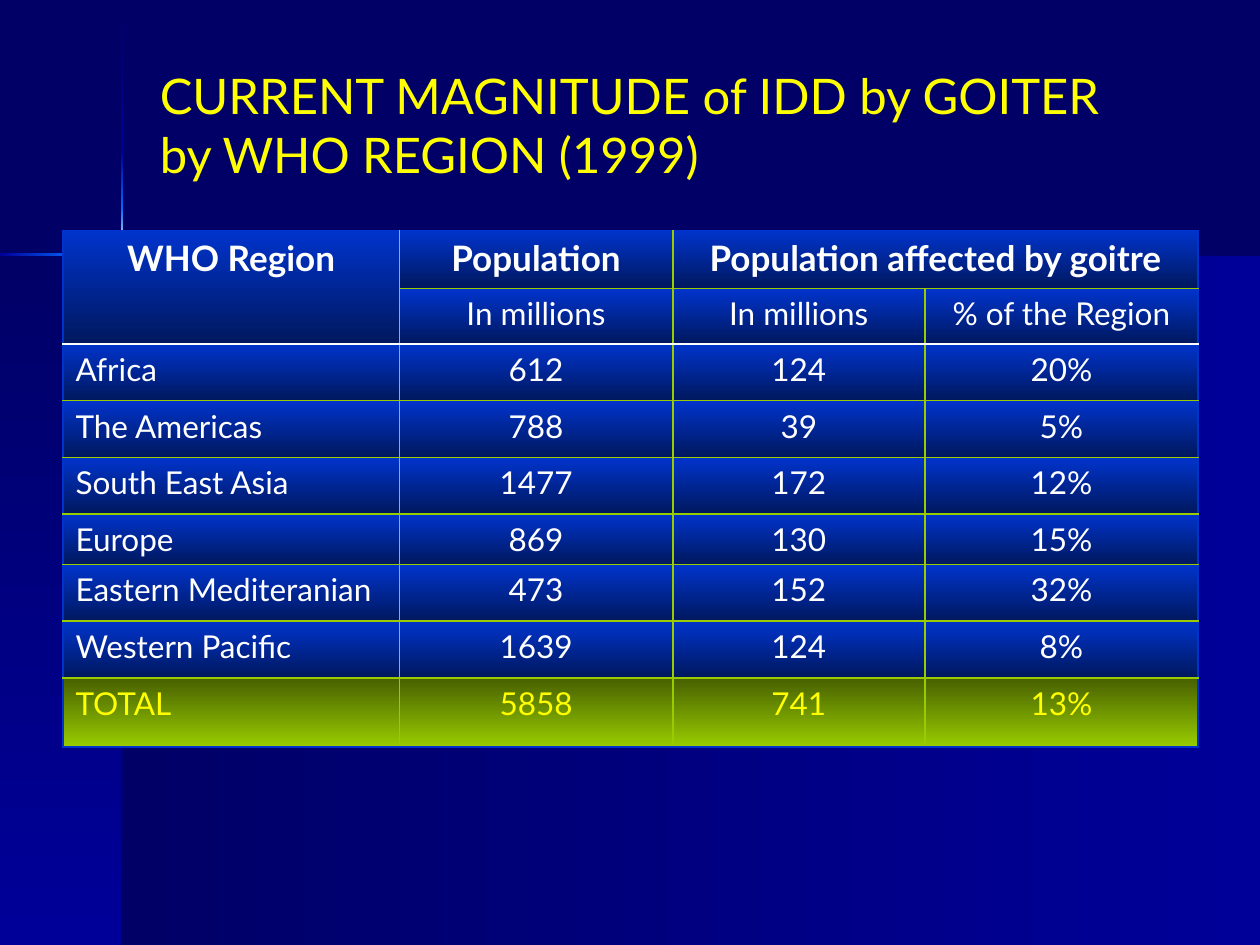
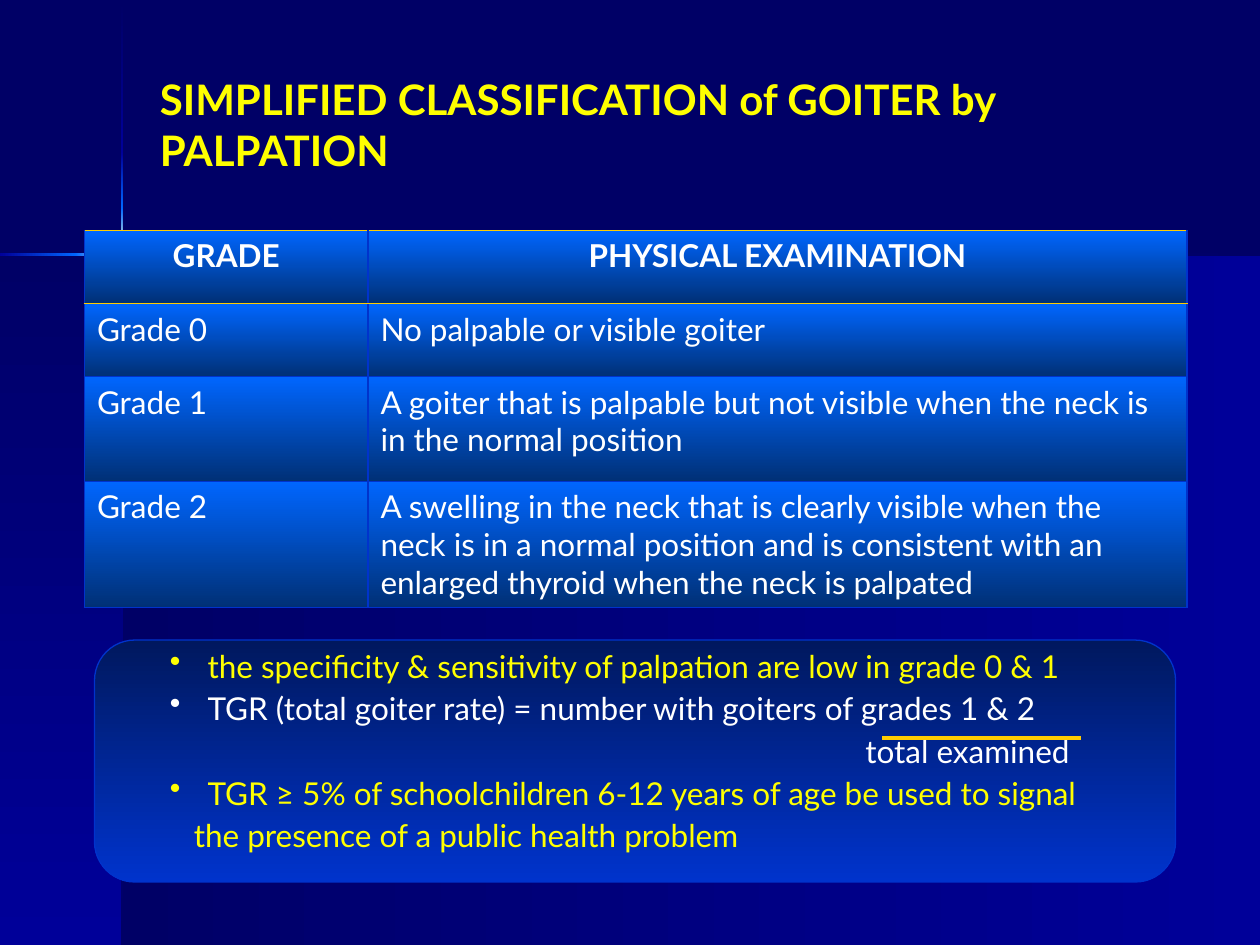
from dataclasses import dataclass, field

import pptx
import pptx.dml.color
import pptx.enum.shapes
import pptx.enum.text
import pptx.oxml
import pptx.oxml.ns
import pptx.util

Inches = pptx.util.Inches
Pt = pptx.util.Pt
ALIGN = pptx.enum.text.PP_ALIGN
ANCHOR = pptx.enum.text.MSO_ANCHOR
SHAPE = pptx.enum.shapes.MSO_SHAPE
NS = pptx.oxml.ns.nsdecls("a")


@dataclass(frozen=True)
class Theme:
    font: str = "Lato"
    navy: str = "000066"
    deep: str = "000099"
    royal: str = "0033CC"
    royal_dark: str = "00185E"
    bright: str = "0066FF"
    bright_dark: str = "003076"
    glow: str = "FFFFCC"
    lime: str = "99CC00"
    lime_dark: str = "476000"
    yellow: str = "FFFF00"
    gold: str = "FFCC00"
    white: str = "FFFFFF"
    title: int = 28
    subtitle: int = 24
    heading: int = 20
    body: int = 18


T = Theme()


@dataclass(frozen=True)
class Band:
    left: float
    top: float
    width: float
    height: float
    colors: tuple[str, ...]
    angle: int


@dataclass(frozen=True)
class Bullet:
    text: str
    color: str
    indent: float = 0.3
    marked: bool = True


@dataclass(frozen=True)
class Grid:
    """Look of a table; rules maps a horizontal line number to its colour."""
    left: float
    top: float
    cols: list[float]
    rows: list[float]
    fill: tuple[str, str]
    inner: str
    outer: str
    rules: dict[int, str] = field(default_factory=dict)


DOWN, ACROSS = 90, 0
FADE_IN, FADE_OUT = (T.navy, T.deep), (T.deep, T.navy)
RISE, FALL = (T.deep, T.bright), (T.bright, T.deep)
SHINE = (T.bright, T.glow, T.bright)

# Background panels and the glowing cross lines
BANDS = [
    Band(0.97, 2.02, 9.03, 5.48, FADE_IN, ACROSS),
    Band(0, 2.02, 0.97, 5.48, FADE_IN, DOWN),
    Band(0.96, 0.01, 0.02, 1.21, FADE_IN, DOWN),
    Band(0.96, 2.82, 0.02, 4.68, FADE_OUT, DOWN),
    Band(1.77, 2.01, 8.23, 0.02, FADE_OUT, ACROSS),
    Band(0.96, 2.38, 0.02, 0.44, FALL, DOWN),
    Band(0.96, 1.21, 0.02, 0.44, RISE, DOWN),
    Band(0.96, 1.65, 0.02, 0.73, SHINE, DOWN),
    Band(0, 2.01, 0.61, 0.02, RISE, ACROSS),
    Band(1.33, 2.01, 0.44, 0.02, FALL, ACROSS),
    Band(0.6, 2.01, 0.73, 0.02, SHINE, ACROSS),
]


def rgb(color: str):
    return pptx.dml.color.RGBColor.from_string(color)


def gradient(colors: tuple[str, ...], angle: int):
    step = 100000 // (len(colors) - 1)
    stops = "".join(f'<a:gs pos="{i * step}"><a:srgbClr val="{c}"/></a:gs>'
                    for i, c in enumerate(colors))
    return pptx.oxml.parse_xml(
        f'<a:gradFill {NS} rotWithShape="1"><a:gsLst>{stops}</a:gsLst>'
        f'<a:lin ang="{angle * 60000}" scaled="0"/></a:gradFill>')


def add_text(p, text: str, *, size: int = T.body, color: str = T.white,
             bold: bool = False, align=ALIGN.LEFT) -> None:
    p.alignment = align
    r = p.add_run()
    r.text = text
    r.font.name = T.font
    r.font.size = Pt(size)
    r.font.bold = bold
    r.font.color.rgb = rgb(color)


def add_panel(s, kind, band: Band, line: str | None = None) -> None:
    sp = s.shapes.add_shape(kind, Inches(band.left), Inches(band.top),
                            Inches(band.width), Inches(band.height))
    sp.shadow.inherit = False
    geometry = sp._element.spPr.find(pptx.oxml.ns.qn("a:prstGeom"))
    geometry.addnext(gradient(band.colors, band.angle))
    if line:
        sp.line.color.rgb = rgb(line)
        sp.line.width = Pt(0.75)
    else:
        sp.line.fill.background()


def add_text_frame(s, left: float, top: float, width: float, height: float):
    tf = s.shapes.add_textbox(Inches(left), Inches(top), Inches(width),
                              Inches(height)).text_frame
    tf.word_wrap = True
    return tf


def new_slide(prs, title: str, *, width: float, size: int, bold: bool = False):
    s = prs.slides.add_slide(prs.slide_layouts[6])
    s.background.fill.solid()
    s.background.fill.fore_color.rgb = rgb(T.navy)
    for band in BANDS:
        add_panel(s, SHAPE.RECTANGLE, band)
    tf = add_text_frame(s, 1.17, 0.33, width, 1.31)
    tf.vertical_anchor = ANCHOR.MIDDLE
    add_text(tf.paragraphs[0], title, size=size, color=T.yellow, bold=bold)
    return s


def add_grid(s, grid: Grid, merges: tuple = ()):
    table = s.shapes.add_table(
        len(grid.rows), len(grid.cols), Inches(grid.left), Inches(grid.top),
        Inches(sum(grid.cols)), Inches(sum(grid.rows))).table
    table.first_row = table.horz_banding = False
    for col, width in zip(table.columns, grid.cols):
        col.width = Inches(width)
    for row, height in zip(table.rows, grid.rows):
        row.height = Inches(height)
    for start, end in merges:
        table.cell(*start).merge(table.cell(*end))
    for i in range(len(grid.rows)):
        for j in range(len(grid.cols)):
            cell = table.cell(i, j)
            if not cell.is_spanned:
                style_cell(cell, grid, i, j)
    return table


def style_cell(cell, grid: Grid, i: int, j: int) -> None:
    bottom, right = i + 1, j + 1
    if cell.is_merge_origin:
        bottom, right = i + cell.span_height, j + cell.span_width
    edges = {
        "L": grid.inner if j else grid.outer,
        "R": grid.inner if right < len(grid.cols) else grid.outer,
        "T": grid.rules.get(i, grid.inner),
        "B": grid.rules.get(bottom, grid.inner),
    }
    tcPr = cell._tc.get_or_add_tcPr()
    for side, color in edges.items():
        tcPr.append(pptx.oxml.parse_xml(
            f'<a:ln{side} {NS} w="12700"><a:solidFill><a:srgbClr val="{color}"/>'
            f'</a:solidFill></a:ln{side}>'))
    is_total = cell.text_frame is not None and grid is REGION_GRID and bottom == len(grid.rows)
    tcPr.append(gradient((T.lime_dark, T.lime) if is_total else grid.fill, DOWN))


def add_bullets(tf, bullets: list[Bullet]) -> None:
    for i, bullet in enumerate(bullets):
        p = tf.paragraphs[0] if i == 0 else tf.add_paragraph()
        add_text(p, bullet.text, color=bullet.color)
        p.line_spacing = 0.7
        p.space_before = Pt(9)
        pPr = p._p.get_or_add_pPr()
        pPr.set("marL", str(Inches(bullet.indent)))
        if bullet.marked:
            pPr.set("indent", str(-Inches(bullet.indent)))
            pPr.append(pptx.oxml.parse_xml(f'<a:buChar {NS} char="•"/>'))


# Slide 1: regional figures
REGION_GRID = Grid(0.5, 1.83, [2.67, 2.17, 2, 2.17],
                   [0.46, 0.44, 0.45, 0.45, 0.45, 0.4, 0.45, 0.45, 0.55],
                   (T.royal, T.royal_dark), T.lime, T.royal,
                   {0: T.royal, 2: T.white, 9: T.royal})
REGION_ROWS = [
    ("WHO Region", "Population", "Population affected by goitre", ""),
    ("", "In millions", "In millions", "% of the Region"),
    ("Africa", "612", "124", "20%"),
    ("The Americas", "788", "39", "5%"),
    ("South East Asia", "1477", "172", "12%"),
    ("Europe", "869", "130", "15%"),
    ("Eastern Mediteranian", "473", "152", "32%"),
    ("Western Pacific", "1639", "124", "8%"),
    ("TOTAL", "5858", "741", "13%"),
]


def region_slide(prs) -> None:
    s = new_slide(prs, "CURRENT MAGNITUDE of IDD by GOITER by WHO REGION (1999)",
                  width=8.02, size=T.title)
    table = add_grid(s, REGION_GRID, (((0, 0), (1, 0)), ((0, 2), (0, 3))))
    for i, row in enumerate(REGION_ROWS):
        for j, text in enumerate(row):
            if text:
                add_text(table.cell(i, j).text_frame.paragraphs[0], text,
                         size=T.body if i else T.heading, bold=i == 0,
                         color=T.yellow if row[0] == "TOTAL" else T.white,
                         align=ALIGN.LEFT if i > 1 and j == 0 else ALIGN.CENTER)


# Slide 2: grades by palpation
GRADE_GRID = Grid(0.67, 1.83, [2.25, 6.5], [0.58, 0.58, 0.83, 1],
                  (T.bright, T.bright_dark), T.royal, T.royal,
                  {0: T.gold, 1: T.gold})
GRADE_ROWS = [
    ("GRADE", "PHYSICAL EXAMINATION"),
    ("Grade 0", "No palpable or visible goiter"),
    ("Grade 1", "A goiter that is palpable but not visible when the neck is "
                "in the normal position"),
    ("Grade 2", "A swelling in the neck that is clearly visible when the neck is "
                "in a normal position and is consistent with an enlarged thyroid "
                "when the neck is palpated"),
]
NOTES = [
    Bullet("the specificity & sensitivity of palpation are low in grade 0 & 1", T.yellow),
    Bullet("TGR (total goiter rate) = number with goiters of grades 1 & 2", T.white),
    Bullet("total examined", T.white, 5.52, False),
    Bullet("TGR ≥ 5% of schoolchildren 6-12 years of age be used to signal", T.yellow),
    Bullet("the presence of a public health problem", T.yellow, 0.19, False),
]


def grade_slide(prs) -> None:
    s = new_slide(prs, "SIMPLIFIED CLASSIFICATION of GOITER by PALPATION",
                  width=8.25, size=T.subtitle, bold=True)
    add_panel(s, SHAPE.FLOWCHART_ALTERNATE_PROCESS,
              Band(0.75, 5.08, 8.58, 1.92, (T.royal_dark, T.royal), DOWN), T.royal)
    table = add_grid(s, GRADE_GRID)
    for i, row in enumerate(GRADE_ROWS):
        for j, text in enumerate(row):
            add_text(table.cell(i, j).text_frame.paragraphs[0], text, bold=i == 0,
                     align=ALIGN.LEFT if i else ALIGN.CENTER)
    add_bullets(add_text_frame(s, 1.25, 5.17, 8.17, 1.76), NOTES)

    # Fraction bar
    bar = s.shapes.add_connector(pptx.enum.shapes.MSO_CONNECTOR.STRAIGHT,
                                 Inches(7), Inches(5.86), Inches(8.58), Inches(5.86))
    bar.line.color.rgb = rgb(T.gold)
    bar.line.width = Pt(2.25)
    bar._element.spPr.append(pptx.oxml.parse_xml(f"<a:effectLst {NS}/>"))


def main() -> None:
    prs = pptx.Presentation()
    prs.slide_width, prs.slide_height = Inches(10), Inches(7.5)
    region_slide(prs)
    grade_slide(prs)
    prs.save("out.pptx")


if __name__ == "__main__":
    main()
